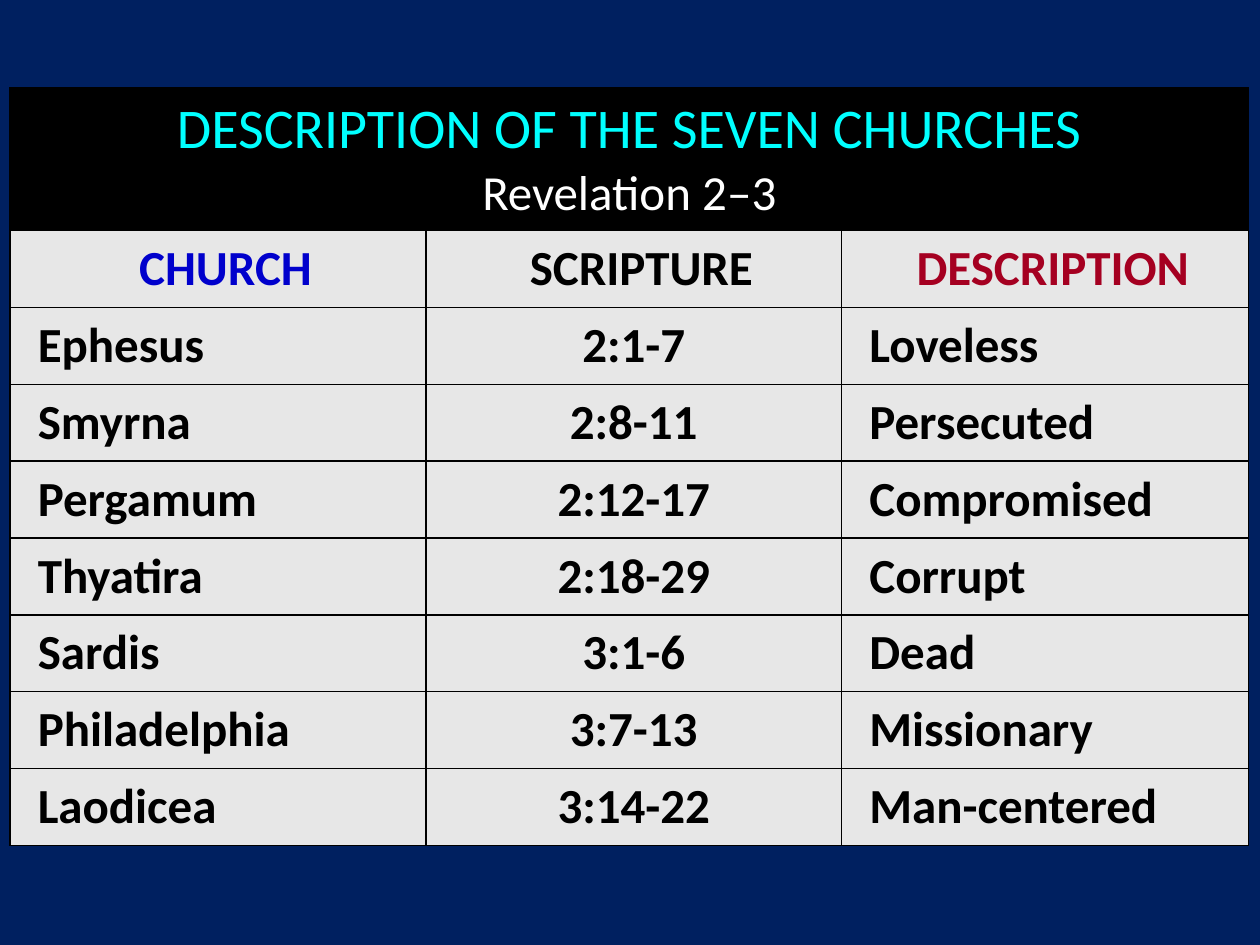
import pptx
import pptx.util
import pptx.dml.color
import pptx.enum.text
import pptx.oxml.ns
import lxml.etree

Inches = pptx.util.Inches
Pt = pptx.util.Pt
RGBColor = pptx.dml.color.RGBColor
ALIGN = pptx.enum.text.PP_ALIGN

NAVY = RGBColor(0x00, 0x20, 0x60)
BLACK = RGBColor(0x00, 0x00, 0x00)
WHITE = RGBColor(0xFF, 0xFF, 0xFF)
CYAN = RGBColor(0x00, 0xFF, 0xFF)
GREY = RGBColor(0xE7, 0xE7, 0xE7)
BLUE = RGBColor(0x00, 0x00, 0xCC)
RED = RGBColor(0xA5, 0x00, 0x21)

FONT = "Calibri"
COL_WIDTHS = [3.3, 3.3, 3.23]
TITLE_HEIGHT, ROW_HEIGHT = 1.13, 0.61
HEADERS = [("CHURCH", BLUE), ("SCRIPTURE", BLACK), ("DESCRIPTION", RED)]
CHURCHES = [
    ("Ephesus", "2:1-7", "Loveless"),
    ("Smyrna", "2:8-11", "Persecuted"),
    ("Pergamum", "2:12-17", "Compromised"),
    ("Thyatira", "2:18-29", "Corrupt"),
    ("Sardis", "3:1-6", "Dead"),
    ("Philadelphia", "3:7-13", "Missionary"),
    ("Laodicea", "3:14-22", "Man-centered"),
]


def add_run(p, text, size, color, bold=False):
    r = p.add_run()
    r.text = text
    r.font.name = FONT
    r.font.size = Pt(size)
    r.font.bold = bold
    r.font.color.rgb = color


def set_borders(cell, color, width):
    """Draw a solid line on all four sides of a cell."""
    qn = pptx.oxml.ns.qn
    tcPr = cell._tc.get_or_add_tcPr()
    for i, side in enumerate(("a:lnL", "a:lnR", "a:lnT", "a:lnB")):
        ln = lxml.etree.Element(qn(side), w=str(Pt(width)))
        fill = lxml.etree.SubElement(ln, qn("a:solidFill"))
        lxml.etree.SubElement(fill, qn("a:srgbClr"), val=str(color))
        tcPr.insert(i, ln)


def style_cell(cell, fill):
    cell.fill.solid()
    cell.fill.fore_color.rgb = fill
    cell.vertical_anchor = pptx.enum.text.MSO_ANCHOR.MIDDLE
    set_borders(cell, BLACK, 1)


def fill_cell(cell, text, color, align, indent):
    p = cell.text_frame.paragraphs[0]
    p.alignment = align
    if indent:
        p._p.get_or_add_pPr().set("marL", str(Inches(indent)))
    add_run(p, text, 28, color, bold=True)


def fill_title(cell):
    p = cell.text_frame.paragraphs[0]
    p.alignment = ALIGN.CENTER
    add_run(p, "DESCRIPTION OF THE SEVEN CHURCHES", 32, CYAN)
    p.add_line_break()
    add_run(p, "Revelation 2‒3", 28, WHITE)


def add_church_table(slide):
    n_rows = len(CHURCHES) + 2
    height = TITLE_HEIGHT + ROW_HEIGHT * (n_rows - 1)
    table = slide.shapes.add_table(
        n_rows, len(COL_WIDTHS), Inches(0.08), Inches(0.7),
        Inches(sum(COL_WIDTHS)), Inches(height)).table
    for col, width in zip(table.columns, COL_WIDTHS):
        col.width = Inches(width)
    for i, row in enumerate(table.rows):
        row.height = Inches(ROW_HEIGHT if i else TITLE_HEIGHT)
        for cell in row.cells:
            style_cell(cell, GREY if i else BLACK)

    # Title across all columns
    table.cell(0, 0).merge(table.cell(0, len(COL_WIDTHS) - 1))
    fill_title(table.cell(0, 0))

    # Column headings
    for c, (text, color) in enumerate(HEADERS):
        fill_cell(table.cell(1, c), text, color, ALIGN.CENTER, 0.12)

    # One row per church, scripture centred
    for r, church in enumerate(CHURCHES, start=2):
        for c, text in enumerate(church):
            align, indent = (ALIGN.CENTER, 0) if c == 1 else (ALIGN.LEFT, 0.12)
            fill_cell(table.cell(r, c), text, BLACK, align, indent)


def main():
    prs = pptx.Presentation()
    prs.slide_width = Inches(10)
    prs.slide_height = Inches(7.5)
    slide = prs.slides.add_slide(prs.slide_layouts[6])
    slide.background.fill.solid()
    slide.background.fill.fore_color.rgb = NAVY
    add_church_table(slide)
    prs.save("out.pptx")


if __name__ == "__main__":
    main()
